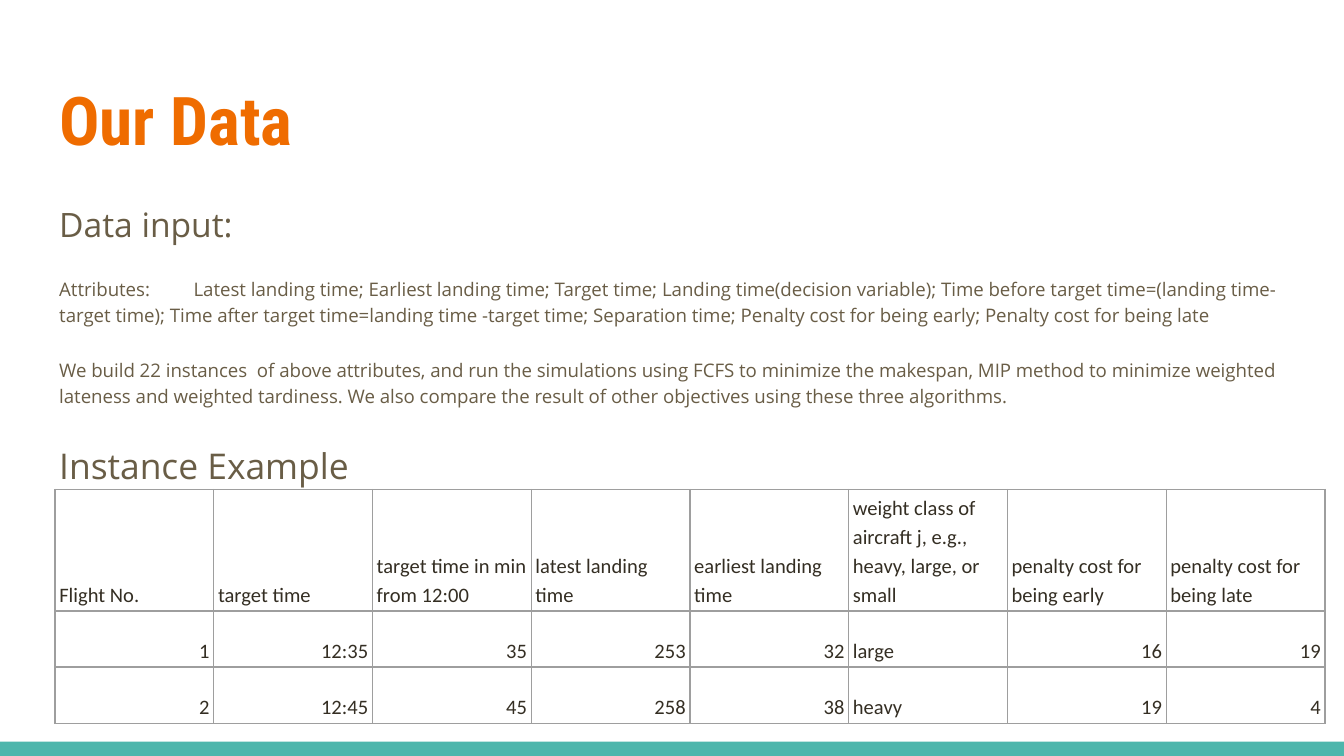
from lxml.etree import SubElement
from pptx import Presentation
from pptx.dml.color import RGBColor
from pptx.enum.shapes import MSO_SHAPE
from pptx.enum.text import MSO_ANCHOR, PP_ALIGN
from pptx.oxml.ns import qn
from pptx.util import Cm, Pt

COLORS = {
    "accent": "4DB6AC",
    "title": "EF6C00",
    "body": "695D46",
    "cell": "342E23",
    "grid": "9E9E9E",
    "background": "FFFFFF",
}

BODY = [
    ("Data input:", 18),
    ("Attributes:\tLatest landing time; Earliest landing time; Target time; "
     "Landing time(decision variable); Time before target time=(landing time-target time); "
     "Time after target time=landing time -target time; Separation time; "
     "Penalty cost for being early; Penalty cost for being late", 10),
    ("We build 22 instances  of above attributes, and run the simulations using FCFS "
     "to minimize the makespan, MIP method to minimize weighted lateness and weighted "
     "tardiness. We also compare the result of other objectives using these three "
     "algorithms.", 10),
    ("Instance Example", 19),
]

FLIGHTS = [
    ["Flight No.", "target time", "target time in min from 12:00", "latest landing time",
     "earliest landing time", "weight class of aircraft j, e.g., heavy, large, or small",
     "penalty cost for being early", "penalty cost for being late"],
    ["1", "12:35", "35", "253", "32", "large", "16", "19"],
    ["2", "12:45", "45", "258", "38", "heavy", "19", "4"],
]


def rgb(name):
    return RGBColor.from_string(COLORS[name])


class SlideBuilder:
    def __init__(self, slide):
        self.slide = slide
        self.line_spacing = 1.15
        self.inset = Cm(0.25)
        self.cell_insets = Cm(0.08), Cm(0.05)

    def background(self, color):
        fill = self.slide.background.fill
        fill.solid()
        fill.fore_color.rgb = rgb(color)

    def bar(self, left, top, width, height, color):
        bar = self.slide.shapes.add_shape(
            MSO_SHAPE.RECTANGLE, Cm(left), Cm(top), Cm(width), Cm(height))
        bar.shadow.inherit = False
        bar.fill.solid()
        bar.fill.fore_color.rgb = rgb(color)
        bar.line.fill.background()

    def run(self, paragraph, text, size, font, color, bold=False):
        run = paragraph.add_run()
        run.text = text
        run.font.size = Pt(size)
        run.font.name = font
        run.font.bold = bold
        run.font.color.rgb = rgb(color)

    def text(self, left, top, width, height, lines, font, color,
             bold=False, spacing=1.0, after=0):
        """Add a text box with one paragraph for each (text, size) pair."""
        frame = self.slide.shapes.add_textbox(
            Cm(left), Cm(top), Cm(width), Cm(height)).text_frame
        frame.word_wrap = True
        frame.margin_left = frame.margin_right = self.inset
        frame.margin_top = frame.margin_bottom = self.inset
        for index, (line, size) in enumerate(lines):
            paragraph = frame.add_paragraph() if index else frame.paragraphs[0]
            paragraph.line_spacing = spacing
            paragraph.space_after = Pt(after)
            self.run(paragraph, line, size, font, color, bold)

    def table(self, left, top, column_width, row_heights, rows):
        columns = len(rows[0])
        table = self.slide.shapes.add_table(
            len(rows), columns, Cm(left), Cm(top),
            Cm(column_width * columns), Cm(sum(row_heights))).table
        table.first_row = table.horz_banding = False
        for column in table.columns:
            column.width = Cm(column_width)
        for r, (height, values) in enumerate(zip(row_heights, rows)):
            table.rows[r].height = Cm(height)
            for c, value in enumerate(values):
                self.cell(table.cell(r, c), value)

    def cell(self, cell, value):
        """Fill a cell; values that start with a digit are set to the right."""
        cell.margin_left = cell.margin_right = self.cell_insets[0]
        cell.margin_top = cell.margin_bottom = self.cell_insets[1]
        cell.vertical_anchor = MSO_ANCHOR.BOTTOM
        paragraph = cell.text_frame.paragraphs[0]
        paragraph.line_spacing = self.line_spacing
        paragraph.alignment = PP_ALIGN.RIGHT if value[0].isdigit() else PP_ALIGN.LEFT
        self.run(paragraph, value, 11, "Calibri", "cell")
        properties = cell._tc.get_or_add_tcPr()
        for side in ("a:lnL", "a:lnR", "a:lnT", "a:lnB"):
            border = SubElement(properties, qn(side), w=str(Pt(0.75)))
            SubElement(SubElement(border, qn("a:solidFill")), qn("a:srgbClr"),
                       val=COLORS["grid"])
        cell.fill.background()


def main():
    presentation = Presentation()
    presentation.slide_width = Cm(25.4)
    presentation.slide_height = Cm(14.29)
    builder = SlideBuilder(presentation.slides.add_slide(presentation.slide_layouts[6]))

    builder.background("background")
    builder.bar(0, 14.02, 25.4, 0.27, "accent")
    builder.text(0.87, 1.24, 23.67, 1.96, [("Our Data", 36)],
                 "Roboto Condensed", "title", bold=True)
    builder.text(0.87, 3.5, 23.67, 9.17, BODY, "Open Sans", "body",
                 spacing=builder.line_spacing, after=16)
    builder.table(1.04, 9.25, 3, [2.3, 1.06, 1.06], FLIGHTS)

    presentation.save("out.pptx")


if __name__ == "__main__":
    main()
